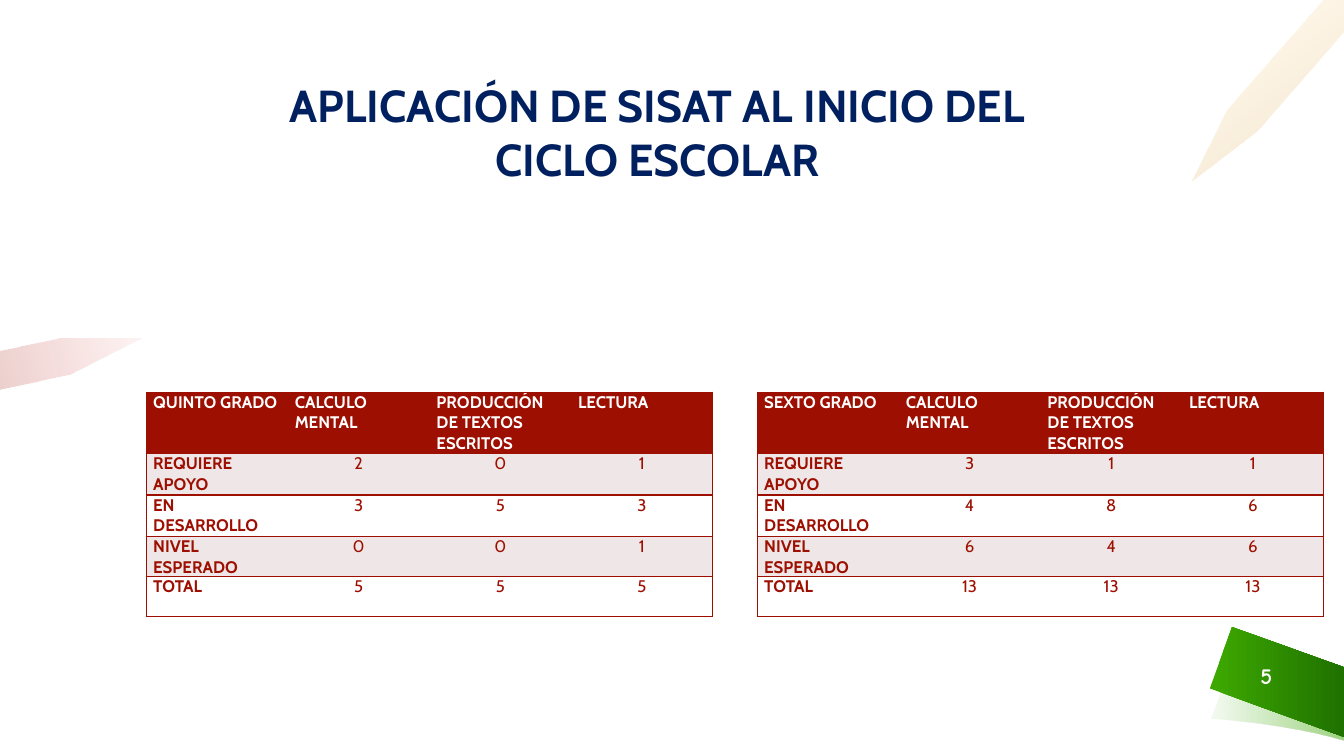
from lxml import etree
from pptx import Presentation, util as u
from pptx.dml.color import RGBColor
from pptx.enum import text
from pptx.oxml import ns

RED, BAND, WHITE, NAVY = "9D0F00", "EFE7E7", "FFFFFF", "002060"
NO_STYLE = "{2D5ABB26-0587-4C30-8999-92F81FD0307C}"
SUBJECTS = ["CALCULO MENTAL", "PRODUCCIÓN DE TEXTOS ESCRITOS", "LECTURA"]
LEVELS = ["REQUIERE APOYO", "EN DESARROLLO", "NIVEL ESPERADO", "TOTAL"]
ROW_HEIGHTS = [0.61, 0.41, 0.41, 0.4, 0.4]
QUINTO = [[2, 0, 1], [3, 5, 3], [0, 0, 1], [5, 5, 5]]
SEXTO = [[3, 1, 1], [4, 8, 6], [6, 4, 6], [13, 13, 13]]


def rgb(value):
    """Turn a hex string into a colour."""
    return RGBColor.from_string(value)


def set_all(target, values):
    """Set every attribute named in a dict of format values."""
    for name, value in values.items():
        setattr(target, name, value)


def write(frame, words, color, align, **font):
    """Write one formatted paragraph into a text frame."""
    frame.text = words
    para = frame.paragraphs[0]
    para.alignment = align
    set_all(para.font, font)
    para.font.color.rgb = rgb(color)


def curve(start, first, second, end, steps=12):
    """Return points along a cubic curve."""
    points = []
    for step in range(steps + 1):
        t = step / steps
        weights = [(1 - t) ** 3, 3 * t * (1 - t) ** 2, 3 * t * t * (1 - t), t ** 3]
        points.append(tuple(sum(w * p[axis] for w, p in zip(weights, (start, first, second, end)))
                            for axis in (0, 1)))
    return points


def add_gradient_outline(page, points, stops, angle):
    """Draw a closed outline with a gradient of (position, colour, opacity) stops."""
    corners = [(u.Inches(x), u.Inches(y)) for x, y in points]
    builder = page.shapes.build_freeform(*corners[0])
    builder.add_line_segments(corners[1:], close=True)
    shape = builder.convert_to_shape()
    shape.shadow.inherit = False
    shape.line.fill.background()
    shape.fill.gradient()
    shape.fill.gradient_angle = (360 - angle) % 360
    for stop, (position, color, opacity) in zip(shape.fill.gradient_stops, stops):
        stop.position = position / 100
        stop.color.rgb = rgb(color)
    for node, (position, color, opacity) in zip(shape._element.iter(ns.qn("a:srgbClr")), stops):
        if opacity < 100:
            etree.SubElement(node, ns.qn("a:alpha"), val=str(opacity * 1000))


def add_borders(cell, sides):
    """Give a cell red one-point lines on the named sides."""
    properties = cell._tc.get_or_add_tcPr()
    for side in sides:
        line = etree.SubElement(properties, ns.qn("a:ln" + side), w=str(u.Pt(1)))
        fill = etree.SubElement(line, ns.qn("a:solidFill"))
        etree.SubElement(fill, ns.qn("a:srgbClr"), val=RED)


def add_grade_table(page, left, grade, counts):
    """Add the results table of one grade."""
    rows = [[grade] + SUBJECTS] + [[level] + line for level, line in zip(LEVELS, counts)]
    width = 5.62
    table = page.shapes.add_table(len(rows), len(rows[0]), u.Inches(left), u.Inches(3.89),
                                  u.Inches(width), u.Inches(sum(ROW_HEIGHTS))).table
    table._tbl.tblPr.find(ns.qn("a:tableStyleId")).text = NO_STYLE
    for column in table.columns:
        column.width = u.Inches(width / len(rows[0]))
    for r, values in enumerate(rows):
        table.rows[r].height = u.Inches(ROW_HEIGHTS[r])
        for c, value in enumerate(values):
            cell = table.cell(r, c)
            sides = ["L"] * (c == 0) + ["R"] * (c == len(values) - 1) + ["T", "B"]
            add_borders(cell, sides)
            cell.fill.solid()
            cell.fill.fore_color.rgb = rgb(RED if r == 0 else BAND if r % 2 else WHITE)
            set_all(cell, dict(margin_left=u.Inches(0.07), margin_right=u.Inches(0.07),
                               margin_top=0, margin_bottom=0))
            label = r == 0 or c == 0
            write(cell.text_frame, str(value), WHITE if r == 0 else RED,
                  text.PP_ALIGN.LEFT if label else text.PP_ALIGN.CENTER,
                  name="Cabin", size=u.Pt(12), bold=label)


def add_decoration(page):
    """Draw the ribbon and the two pencil tips."""
    ribbon_shade = (curve((12.02, 7.13), (12.02, 7.13), (12.78, 7.18), (13.33, 7.35))
                    + curve((13.33, 6.68), (12.72, 6.51), (12.24, 6.52), (12.24, 6.52)))
    ribbon = [(13.33, 6.62), (12.22, 6.22), (12, 6.83), (13.33, 7.31)]
    red_tip = [(1.4, 3.36), (0.58, 3.36), (0, 3.48), (0, 3.86), (0.7, 3.71)]
    yellow_tip = [(13.12, 0), (12.17, 1.09), (11.82, 1.8), (12.47, 1.3), (13.33, 0.31), (13.33, 0)]
    add_gradient_outline(page, ribbon_shade, [(3, "3DA800", 6), (100, "3DA800", 50)], 0)
    add_gradient_outline(page, ribbon, [(3, "3DA800", 100), (100, "1F7100", 100)], 0)
    add_gradient_outline(page, red_tip, [(0, "D30F00", 5), (100, RED, 20)], 164)
    add_gradient_outline(page, yellow_tip, [(0, "FFAA00", 5), (100, "C07400", 20)], 53)


def add_page_number(page, number):
    """Write the page number on the ribbon."""
    box = page.shapes.add_textbox(u.Inches(12.21), u.Inches(6.5), u.Inches(0.7), u.Inches(0.4))
    set_all(box.text_frame, dict(word_wrap=True, vertical_anchor=text.MSO_ANCHOR.MIDDLE))
    write(box.text_frame, number, WHITE, text.PP_ALIGN.CENTER,
          name="Comic Neue", size=u.Pt(16), bold=True)


def set_title(page, words):
    """Place and format the title placeholder."""
    title = page.shapes.title
    set_all(title, dict(left=u.Inches(2.5), top=u.Inches(0.72),
                        width=u.Inches(8.04), height=u.Inches(1.18)))
    set_all(title.text_frame, dict(word_wrap=True, vertical_anchor=text.MSO_ANCHOR.TOP,
                                   auto_size=text.MSO_AUTO_SIZE.SHAPE_TO_FIT_TEXT))
    write(title.text_frame, words, NAVY, text.PP_ALIGN.CENTER,
          name="Cabin", size=u.Pt(32), bold=True)


def main():
    """Build and save the slide."""
    deck = Presentation()
    set_all(deck, dict(slide_width=u.Inches(13.33), slide_height=u.Inches(7.5)))
    page = deck.slides.add_slide(deck.slide_layouts[5])
    add_decoration(page)
    add_page_number(page, "5")
    add_grade_table(page, 1.45, "QUINTO GRADO", QUINTO)
    add_grade_table(page, 7.51, "SEXTO GRADO", SEXTO)
    set_title(page, "APLICACIÓN DE SISAT AL INICIO DEL CICLO ESCOLAR")
    deck.save("out.pptx")


if __name__ == "__main__":
    main()
